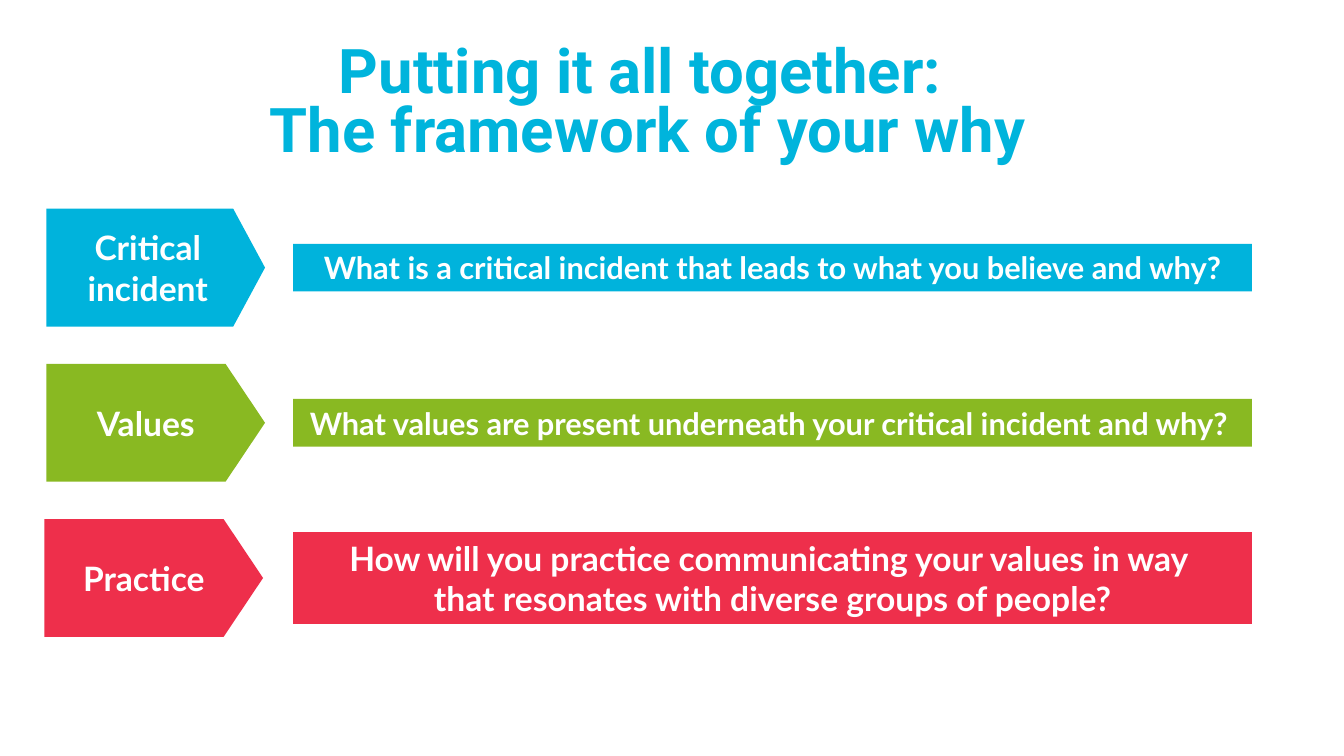
from dataclasses import dataclass

from pptx import Presentation
from pptx.dml.color import RGBColor as Rgb
from pptx.enum import shapes as sh, text as tx
from pptx.util import Cm, Pt


@dataclass(frozen=True)
class Theme:
    """Colours, fonts and type sizes."""
    blue: str = "00B3DC"
    green: str = "89B922"
    red: str = "EE2F4B"
    title: str = "00B4DC"
    white: str = "FFFFFF"
    head: str = "Roboto"
    body: str = "Lato"
    big: int = 44
    mid: int = 24
    small: int = 22


@dataclass(frozen=True)
class Row:
    """One step of the framework."""
    label: str
    lines: tuple
    fill: str
    size: int
    left: float = 1.17
    point: float = 0.335
    high: float = 1.2


T = Theme()
ROWS = (
    Row("Critical incident",
        ("What is a critical incident that leads to what you believe and why?",),
        T.blue, T.small, point=0.27),
    Row("Values",
        ("What values are present underneath your critical incident and why? ",),
        T.green, T.small),
    Row("Practice",
        ("How will you practice communicating your values in way ",
         "that resonates with diverse groups of people?"),
        T.red, T.mid, left=1.12, high=2.31),
)


def write(shape, lines, font, size, color, space=None):
    """Fill a shape with centred bold paragraphs."""
    frame = shape.text_frame
    frame.word_wrap = True
    frame.text = "\n".join(lines)
    for para in frame.paragraphs:
        para.alignment = tx.PP_ALIGN.CENTER
        para.line_spacing = space
        para.font.name = font
        para.font.size = Pt(size)
        para.font.bold = True
        para.font.color.rgb = Rgb.from_string(color)


def block(slide, kind, box, fill, lines, size):
    """Draw a filled shape with white text in its middle."""
    shape = slide.shapes.add_shape(kind, *map(Cm, box))
    shape.shadow.inherit = False
    shape.fill.solid()
    shape.fill.fore_color.rgb = Rgb.from_string(fill)
    shape.line.fill.background()
    write(shape, lines, T.body, size, T.white)
    shape.text_frame.vertical_anchor = tx.MSO_ANCHOR.MIDDLE
    return shape


def title(slide, box, lines):
    """Place the two-line heading in its box."""
    area = slide.shapes.add_textbox(*map(Cm, box))
    write(area, lines, T.head, T.big, T.title, 0.8)
    area.text_frame.auto_size = tx.MSO_AUTO_SIZE.SHAPE_TO_FIT_TEXT


def step(slide, box, row):
    """Place a pointed label and its question, centred on one line."""
    left, top, width, high = box
    arrow = block(slide, sh.MSO_SHAPE.PENTAGON, (left, top, 5.51, high),
                  row.fill, (row.label,), T.mid)
    arrow.adjustments[0] = row.point
    wide = 24.16
    bar = block(slide, sh.MSO_SHAPE.RECTANGLE,
                (left + width - wide, top + (high - row.high) / 2, wide, row.high),
                row.fill, row.lines, row.size)
    bar.text_frame.auto_size = tx.MSO_AUTO_SIZE.SHAPE_TO_FIT_TEXT


def main():
    """Build the slide and save it."""
    deck = Presentation()
    deck.slide_width, deck.slide_height = Cm(33.87), Cm(19.05)
    slide = deck.slides.add_slide(deck.slide_layouts[6])
    right = 31.55
    for i, row in enumerate(ROWS):
        step(slide, (row.left, 5.26 + 3.91 * i, right - row.left, 2.97), row)
    title(slide, (1.12, 1.04, 30.43, 3.3),
          ("Putting it all together: ", "The framework of your why"))
    deck.save("out.pptx")


if __name__ == "__main__":
    main()
